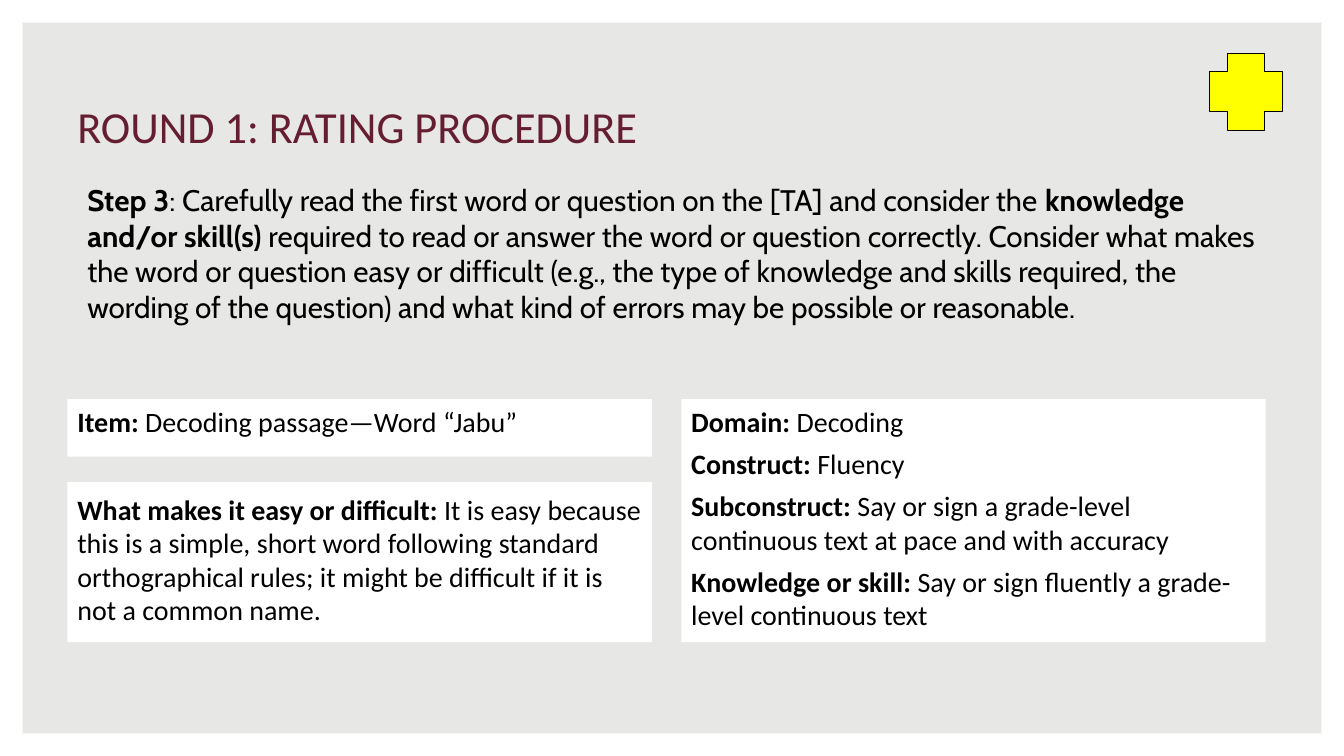
from pptx import Presentation
from pptx.dml.color import RGBColor
from pptx.enum.shapes import MSO_SHAPE
from pptx.enum.text import MSO_ANCHOR, MSO_AUTO_SIZE, PP_ALIGN
from pptx.util import Cm, Pt

FRAME, RECT, PLUS = MSO_SHAPE.FRAME, MSO_SHAPE.RECTANGLE, MSO_SHAPE.CROSS
TOP, BOTTOM = MSO_ANCHOR.TOP, MSO_ANCHOR.BOTTOM
LEFT, FIXED = PP_ALIGN.LEFT, MSO_AUTO_SIZE.NONE

GREY = RGBColor(0xE7, 0xE7, 0xE5)
WHITE = RGBColor(0xFF, 0xFF, 0xFF)
BLACK = RGBColor(0, 0, 0)
WINE = RGBColor(0x65, 0x1D, 0x32)
YELLOW = RGBColor(0xFF, 0xFF, 0)

# Content: paragraphs of (text, bold) runs
TITLE = [[("ROUND 1: RATING PROCEDURE", False)]]
STEP = [[
    ("Step 3", True),
    (": Carefully read the first word or question on the [TA] and consider the ", False),
    ("knowledge and/or skill(s) ", True),
    ("required to read or answer the word or question correctly. Consider what "
     "makes the word or question easy or difficult (e.g., the type of knowledge "
     "and skills required, the wording of the question) and what kind of errors "
     "may be possible or reasonable.", False),
]]
ITEM = [("Item: ", "Decoding passage—Word “Jabu”")]
REASON = [("What makes it easy or difficult: ",
           "It is easy because this is a simple, short word following standard "
           "orthographical rules; it might be difficult if it is not a common name.")]
SKILL = [
    ("Domain: ", "Decoding"),
    ("Construct: ", "Fluency"),
    ("Subconstruct: ",
     "Say or sign a grade-level continuous text at pace and with accuracy"),
    ("Knowledge or skill: ", "Say or sign fluently a grade-level continuous text"),
]

# Layout in centimetres
WIDE, HIGH = 33.87, 19.05
EDGE, FULL = 1.7, 30.2
HALF = 14.73
RIGHT = EDGE + FULL - HALF
ROW, LOW, END = 10.06, 12.15, 16.18
PAD = 0.25

# Each box: left, top, height, vertical inset, label pairs
BOXES = [
    (RIGHT, ROW, END - ROW, 0.13, SKILL),
    (EDGE, LOW, END - LOW, PAD, REASON),
    (EDGE, ROW, 1.45, 0.13, ITEM),
]


def write(shape, paras, font, size, color, anchor=TOP, inset=0.13, gap=0):
    frame = shape.text_frame
    form = {"word_wrap": True, "auto_size": FIXED, "vertical_anchor": anchor,
            "margin_left": Cm(PAD), "margin_right": Cm(PAD),
            "margin_top": Cm(inset), "margin_bottom": Cm(inset)}
    for key, val in form.items():
        setattr(frame, key, val)
    for i, runs in enumerate(paras):
        para = frame.add_paragraph() if i else frame.paragraphs[0]
        para.alignment = LEFT
        para.space_before = Pt(gap if i else 0)
        for text, bold in runs:
            run = para.add_run()
            run.text = text
            for key, val in {"name": font, "size": Pt(size), "bold": bold}.items():
                setattr(run.font, key, val)
            run.font.color.rgb = color


def draw(slide, kind, place, fill, line=None):
    shape = slide.shapes.add_shape(kind, *map(Cm, place))
    shape.shadow.inherit = False
    shape.fill.solid()
    shape.fill.fore_color.rgb = fill
    if line is None:
        shape.line.fill.background()
    else:
        shape.line.color.rgb = line
        shape.line.width = Pt(0.75)
    return shape


def main():
    deck = Presentation()
    deck.slide_width, deck.slide_height = Cm(WIDE), Cm(HIGH)
    slide = deck.slides.add_slide(deck.slide_layouts[5])
    slide.background.fill.solid()
    slide.background.fill.fore_color.rgb = GREY

    # White border
    border = draw(slide, FRAME, (0, 0, WIDE, HIGH), WHITE)
    border.adjustments[0] = 0.03

    # Title and step
    title = slide.shapes.title
    place = {"left": EDGE, "top": 2.34, "width": FULL, "height": 1.63}
    for key, val in place.items():
        setattr(title, key, Cm(val))
    write(title, TITLE, "Calibri", 31.7, WINE, BOTTOM)
    step = slide.shapes.add_textbox(Cm(EDGE + PAD), Cm(4.45), Cm(FULL - PAD), Cm(4.6))
    write(step, STEP, "Cabin", 21.2, BLACK)

    # White boxes
    for left, top, height, inset, pairs in BOXES:
        box = draw(slide, RECT, (left, top, HALF, height), WHITE)
        paras = [[(label, True), (text, False)] for label, text in pairs]
        write(box, paras, "Calibri", 20, BLACK, inset=inset, gap=6)

    # Yellow cross
    draw(slide, PLUS, (30.48, 1.35, 1.85, 1.93), YELLOW, BLACK)

    deck.save("out.pptx")


if __name__ == "__main__":
    main()
